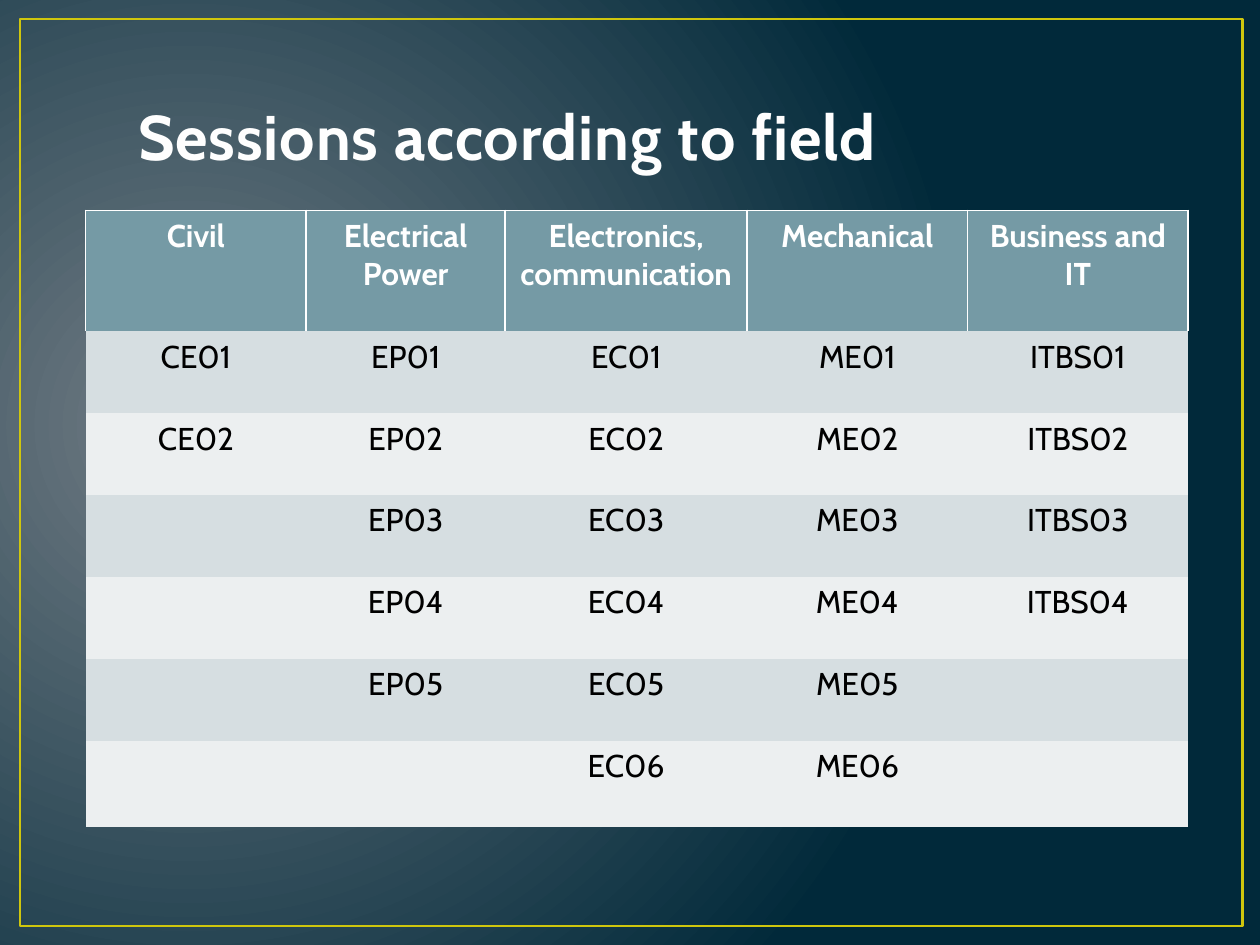
from dataclasses import dataclass

from lxml.etree import SubElement
from pptx import Presentation
from pptx.dml.color import RGBColor
from pptx.enum.shapes import MSO_SHAPE
from pptx.enum.text import MSO_ANCHOR, PP_ALIGN
from pptx.oxml import parse_xml
from pptx.oxml.ns import nsdecls, qn
from pptx.util import Inches, Pt

FONT = "Cabin"
COLOURS = {
    "glow": "717C84",
    "night": "01293A",
    "frame": "CFC60D",
    "title": "FEFEFE",
    "title_edge": "384F55",
    "header": "759AA5",
    "header_text": "FFFFFF",
    "band_dark": "D6DEE1",
    "band_light": "ECEFF0",
    "body_text": "000000",
}
NO_TABLE_STYLE = "{2D5ABB26-0587-4C30-8999-92F81FD0307C}"
HEADER_HEIGHT, ROW_HEIGHT, LAST_ROW_HEIGHT = 0.96, 0.65, 0.68


@dataclass
class Field:
    name: str
    prefix: str
    sessions: int
    width: float


FIELDS = [
    Field("Civil", "CE", 2, 1.75),
    Field("Electrical Power", "EP", 5, 1.58),
    Field("Electronics, communication", "EC", 6, 1.92),
    Field("Mechanical", "ME", 6, 1.75),
    Field("Business and IT", "ITBS", 4, 1.75),
]


def rgb(name: str) -> RGBColor:
    return RGBColor.from_string(COLOURS[name])


def line_xml(tag: str, colour: str, points: float):
    return parse_xml(
        f'<a:{tag} {nsdecls("a")} w="{int(Pt(points))}"><a:solidFill>'
        f'<a:srgbClr val="{COLOURS[colour]}"/></a:solidFill></a:{tag}>'
    )


def write(text_frame, text: str, *, size: float, colour: str,
          bold: bool = False, align=PP_ALIGN.LEFT):
    paragraph = text_frame.paragraphs[0]
    paragraph.alignment = align
    run = paragraph.add_run()
    run.text = text
    run.font.name = FONT
    run.font.size = Pt(size)
    run.font.bold = bold
    run.font.color.rgb = rgb(colour)
    return run


def paint_background(slide) -> None:
    fill = slide.background.fill
    fill.gradient()
    for stop, position, colour in zip(fill.gradient_stops, (0, 1), ("glow", "night")):
        stop.position = position
        stop.color.rgb = rgb(colour)
    gradient = slide.element.find(".//" + qn("a:gradFill"))
    gradient.remove(gradient.find(qn("a:lin")))
    circle = SubElement(gradient, qn("a:path"), {"path": "circle"})
    SubElement(circle, qn("a:fillToRect"),
               {"l": "15000", "t": "50000", "r": "85000", "b": "60000"})


def draw_frame(slide) -> None:
    frame = slide.shapes.add_shape(
        MSO_SHAPE.RECTANGLE, Inches(0.16), Inches(0.15), Inches(9.7), Inches(7.2))
    frame.shadow.inherit = False
    frame.fill.background()
    frame.line.color.rgb = rgb("frame")
    frame.line.width = Pt(1.5)


def draw_title(slide, text: str) -> None:
    title = slide.shapes.add_textbox(Inches(1), Inches(0.42), Inches(8.2), Inches(1))
    title.text_frame.word_wrap = True
    title.text_frame.vertical_anchor = MSO_ANCHOR.BOTTOM
    run = write(title.text_frame, text, size=36, colour="title", bold=True)
    properties = run.font._element
    properties.set("spc", "50")
    properties.insert(0, line_xml("ln", "title_edge", 1.05))


def fill_cell(cell, text: str, *, fill: str, colour: str, bold: bool = False) -> None:
    cell.fill.solid()
    cell.fill.fore_color.rgb = rgb(fill)
    if text:
        write(cell.text_frame, text, size=18, colour=colour, bold=bold,
              align=PP_ALIGN.CENTER)


def draw_sessions(slide, fields: list[Field]) -> None:
    most = max(field.sessions for field in fields)
    heights = [HEADER_HEIGHT] + [ROW_HEIGHT] * (most - 1) + [LAST_ROW_HEIGHT]
    sessions = slide.shapes.add_table(
        len(heights), len(fields), Inches(0.68), Inches(1.67),
        Inches(sum(field.width for field in fields)), Inches(sum(heights))).table
    sessions.first_row = sessions.horz_banding = False
    sessions._tbl.tblPr.find(qn("a:tableStyleId")).text = NO_TABLE_STYLE
    for row, height in zip(sessions.rows, heights):
        row.height = Inches(height)

    for column, field in enumerate(fields):
        sessions.columns[column].width = Inches(field.width)
        # Header with white edges on the left, right and top
        header = sessions.cell(0, column)
        fill_cell(header, field.name, fill="header", colour="header_text", bold=True)
        for order, edge in enumerate(("lnL", "lnR", "lnT")):
            header._tc.tcPr.insert(order, line_xml(edge, "header_text", 1))
        # Numbered sessions on alternating bands
        for number in range(1, most + 1):
            code = f"{field.prefix}{number:02}" if number <= field.sessions else ""
            fill_cell(sessions.cell(number, column), code, colour="body_text",
                      fill="band_dark" if number % 2 else "band_light")


def main() -> None:
    deck = Presentation()
    deck.slide_width, deck.slide_height = Inches(10), Inches(7.5)
    slide = deck.slides.add_slide(deck.slide_layouts[6])
    paint_background(slide)
    draw_frame(slide)
    draw_title(slide, "Sessions according to field")
    draw_sessions(slide, FIELDS)
    deck.save("out.pptx")


if __name__ == "__main__":
    main()
